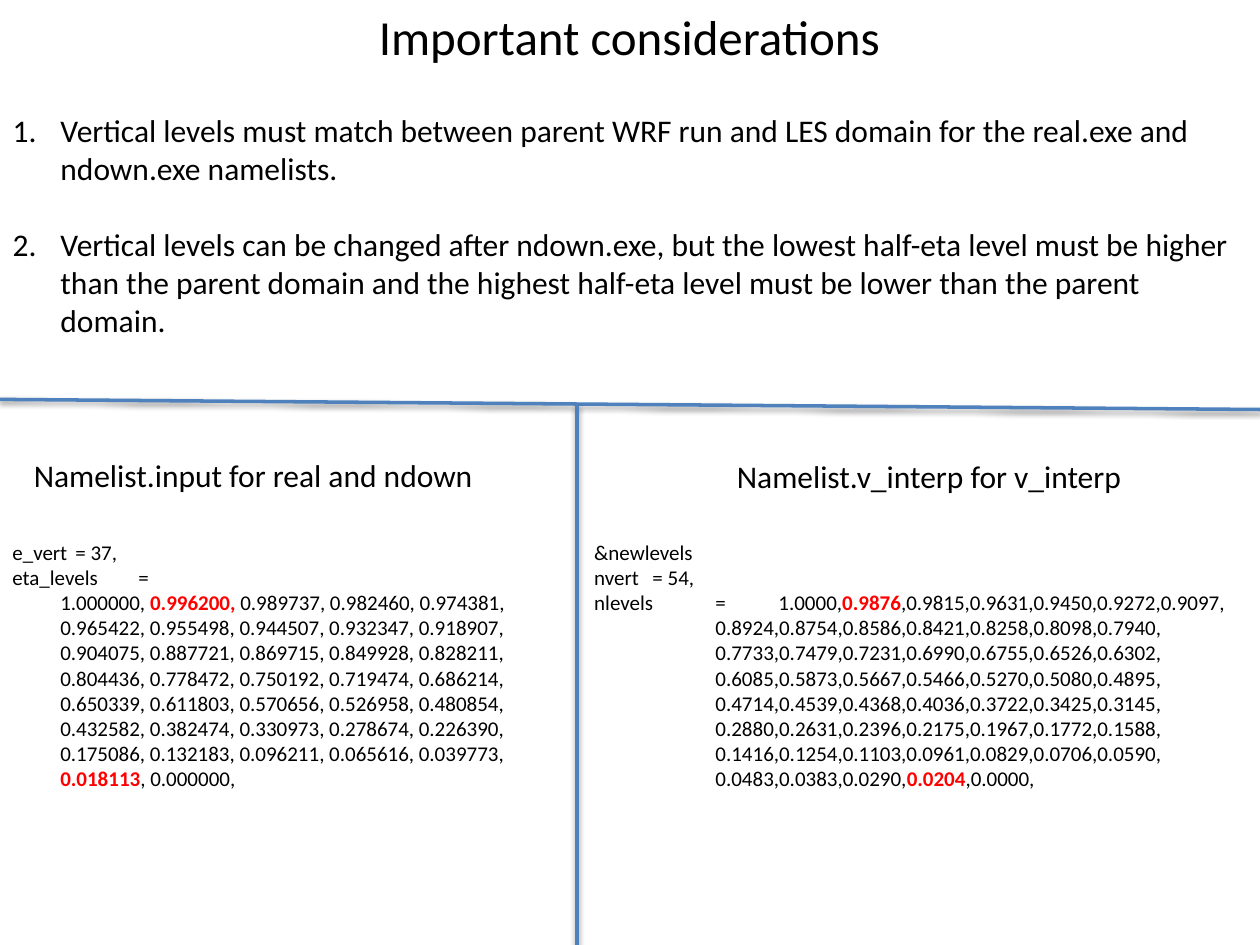
from lxml import etree
from pptx import Presentation
from pptx import util as u
from pptx.dml.color import RGBColor
from pptx.enum import shapes, text
from pptx.oxml import parse_xml
from pptx.oxml.ns import nsdecls, qn

THEME = {
    "font": "Calibri",
    "title": 28, "body": 18, "code": 12, "rule": 2,
    "ink": "000000", "mark": "FF0000", "line": "4F81BD",
}

TITLE = "Important considerations"
POINTS = [
    "Vertical levels must match between parent WRF run and LES domain for the "
    "real.exe and ndown.exe namelists.",
    "Vertical levels can be changed after ndown.exe, but the lowest half-eta level "
    "must be higher than the parent domain and the highest half-eta level must be "
    "lower than the parent domain.",
]
HEADINGS = [
    ("Namelist.input for real and ndown", (0.17, 3.57, 3.92, 0.42)),
    ("Namelist.v_interp for v_interp", (5.75, 3.58, 3.92, 0.4)),
]
# Asterisks enclose the highlighted levels.
NAMELISTS = [
    {
        "box": (4.58, 4.23, 5.25, 2.12),
        "indent": 1.0,
        "settings": [
            (" &newlevels", []),
            (" nvert\t= 54,", [0.96]),
            (" nlevels\t=\t1.0000,*0.9876*,0.9815,0.9631,0.9450,0.9272,0.9097,", [1.0, 1.15]),
        ],
        "levels": [
            "0.8924,0.8754,0.8586,0.8421,0.8258,0.8098,0.7940,",
            "0.7733,0.7479,0.7231,0.6990,0.6755,0.6526,0.6302,",
            "0.6085,0.5873,0.5667,0.5466,0.5270,0.5080,0.4895,",
            "0.4714,0.4539,0.4368,0.4036,0.3722,0.3425,0.3145,",
            "0.2880,0.2631,0.2396,0.2175,0.1967,0.1772,0.1588,",
            "0.1416,0.1254,0.1103,0.0961,0.0829,0.0706,0.0590,",
            "0.0483,0.0383,0.0290,*0.0204*,0.0000,",
        ],
    },
    {
        "box": (0, 4.23, 4.25, 2.12),
        "indent": 0.38,
        "settings": [
            ("e_vert\t= 37,", [1.67]),
            ("eta_levels\t=", [1.69]),
        ],
        "levels": [
            "1.000000, *0.996200, *0.989737, 0.982460, 0.974381,",
            "0.965422, 0.955498, 0.944507, 0.932347, 0.918907,",
            "0.904075, 0.887721, 0.869715, 0.849928, 0.828211,",
            "0.804436, 0.778472, 0.750192, 0.719474, 0.686214,",
            "0.650339, 0.611803, 0.570656, 0.526958, 0.480854,",
            "0.432582, 0.382474, 0.330973, 0.278674, 0.226390,",
            "0.175086, 0.132183, 0.096211, 0.065616, 0.039773,",
            "*0.018113*, 0.000000,",
        ],
    },
]
DIVIDERS = [(0, 3.17, 10, 3.25), (4.58, 3.21, 4.58, 7.5)]


def place(sp, box):
    sp.left, sp.top, sp.width, sp.height = map(u.Inches, box)
    tf = sp.text_frame
    tf.word_wrap = True
    tf.auto_size = text.MSO_AUTO_SIZE.NONE
    tf.vertical_anchor = text.MSO_ANCHOR.TOP
    return tf


def text_box(s, box):
    return place(s.shapes.add_textbox(*map(u.Inches, box)), box)


def add_runs(p, marked, size):
    for i, part in enumerate(marked.split("*")):
        if not part:
            continue
        r = p.add_run()
        r.text = part
        r.font.name = THEME["font"]
        r.font.size = u.Pt(THEME[size])
        r.font.bold = i % 2 == 1
        r.font.color.rgb = RGBColor.from_string(THEME["mark" if i % 2 else "ink"])


def next_paragraph(tf, i):
    return tf.add_paragraph() if i else tf.paragraphs[0]


def indent(p, left, first=0):
    pPr = p._p.get_or_add_pPr()
    pPr.set("marL", str(u.Inches(left)))
    pPr.set("indent", str(u.Inches(first)))
    return pPr


def add_list(tf, points):
    for i, point in enumerate(points):
        p = next_paragraph(tf, i)
        p.space_before = u.Pt(22 if i else 0)
        pPr = indent(p, 0.38, -0.38)
        etree.SubElement(pPr, qn("a:buFont"), typeface="+mj-lt")
        etree.SubElement(pPr, qn("a:buAutoNum"), type="arabicPeriod")
        add_runs(p, point, "body")


def add_namelist(s, namelist):
    tf = text_box(s, namelist["box"])
    rows = [(line, 0, stops) for line, stops in namelist["settings"]]
    rows += [(line, namelist["indent"], []) for line in namelist["levels"]]
    for i, (line, left, stops) in enumerate(rows):
        p = next_paragraph(tf, i)
        pPr = indent(p, left)
        if stops:
            tabs = etree.SubElement(pPr, qn("a:tabLst"))
            for stop in stops:
                etree.SubElement(tabs, qn("a:tab"), pos=str(u.Inches(stop)), algn="l")
        add_runs(p, line, "code")


def add_divider(s, ends):
    line = s.shapes.add_connector(shapes.MSO_CONNECTOR.STRAIGHT, *map(u.Inches, ends))
    line.line.color.rgb = RGBColor.from_string(THEME["line"])
    line.line.width = u.Pt(THEME["rule"])
    line._element.spPr.append(parse_xml(
        f'<a:effectLst {nsdecls("a")}><a:outerShdw blurRad="{u.Pt(3.1)}" '
        f'dist="{u.Pt(1.6)}" dir="5400000" rotWithShape="0">'
        f'<a:srgbClr val="{THEME["ink"]}"><a:alpha val="38000"/></a:srgbClr>'
        '</a:outerShdw></a:effectLst>'))


def main():
    prs = Presentation()
    prs.slide_width, prs.slide_height = u.Inches(10), u.Inches(7.5)
    s = prs.slides.add_slide(prs.slide_layouts[1])
    title, body = s.placeholders
    p = place(title, (0.83, 0, 8.33, 0.57)).paragraphs[0]
    p.alignment = text.PP_ALIGN.CENTER
    add_runs(p, TITLE, "title")
    add_list(place(body, (0, 0.83, 10, 1.92)), POINTS)
    for namelist in NAMELISTS:
        add_namelist(s, namelist)
    for heading, box in HEADINGS:
        add_runs(text_box(s, box).paragraphs[0], heading, "body")
    for ends in DIVIDERS:
        add_divider(s, ends)
    prs.save("out.pptx")


if __name__ == "__main__":
    main()
